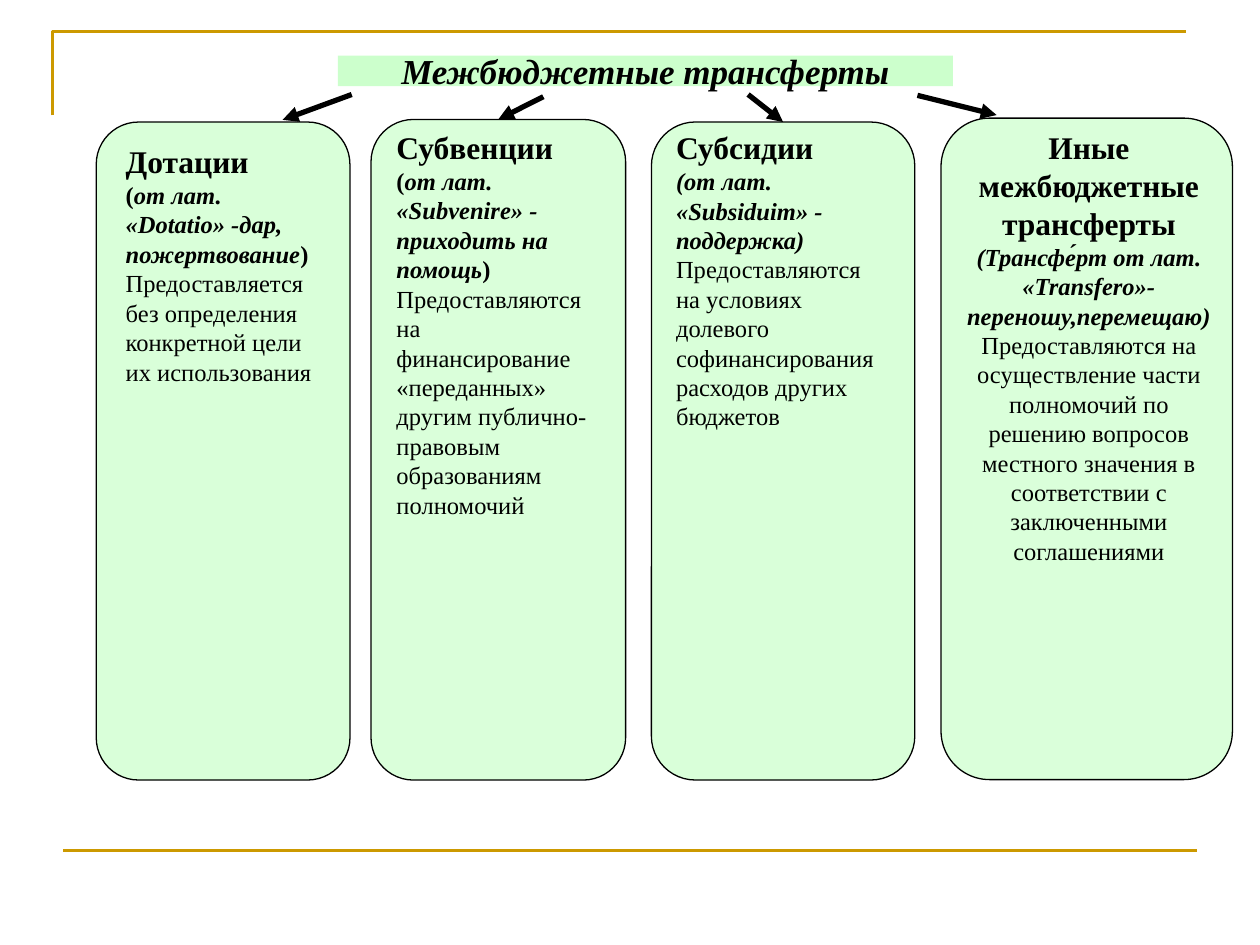
from lxml import etree
from pptx import Presentation
from pptx.dml.color import RGBColor
from pptx.enum import shapes, text
from pptx.oxml import ns
from pptx.util import Pt

COLORS = {"mint": "CCFFCC", "gold": "CC9900", "black": "000000"}
SERIF = "Times New Roman"
HEAD = dict(size=18, bold=True)
LATIN = dict(size=14, bold=True, italic=True)
PAREN = dict(size=14, bold=True)
BODY = dict(size=14)


def add_span(para, words, size, bold=False, italic=False, font=SERIF):
    span = para.add_run()
    span.text = words
    span.font.name = font
    span.font.size = Pt(size)
    span.font.bold = bold
    span.font.italic = italic
    span.font.color.rgb = RGBColor.from_string(COLORS["black"])


def add_line(start, end, color, width):
    line = page.shapes.add_connector(
        shapes.MSO_CONNECTOR.STRAIGHT, *map(Pt, start + end))
    line.line.color.rgb = RGBColor.from_string(COLORS[color])
    line.line.width = Pt(width)
    etree.SubElement(line._element.spPr, ns.qn("a:effectLst"))
    return line


deck = Presentation()
deck.slide_width, deck.slide_height = Pt(720), Pt(540)
page = deck.slides.add_slide(deck.slide_layouts[5])

# Gold frame lines
builder = page.shapes.build_freeform(Pt(30), Pt(66))
builder.add_line_segments([(Pt(30), Pt(18)), (Pt(678), Pt(18))], close=False)
corner = builder.convert_to_shape()
corner.fill.background()
corner.line.color.rgb = RGBColor.from_string(COLORS["gold"])
corner.line.width = Pt(1.5)
corner.shadow.inherit = False
add_line((36, 486), (684, 486), "gold", 1.5)

# Title band
title = page.shapes.title
title.left, title.top, title.width, title.height = map(Pt, (193, 31.75, 351.5, 17.5))
title.fill.solid()
title.fill.fore_color.rgb = RGBColor.from_string(COLORS["mint"])
frame = title.text_frame
frame.auto_size = text.MSO_AUTO_SIZE.NONE
frame.word_wrap = False
frame.vertical_anchor = text.MSO_ANCHOR.MIDDLE
frame.paragraphs[0].alignment = text.PP_ALIGN.CENTER
add_span(frame.paragraphs[0], "Межбюджетные трансферты", 20, bold=True, italic=True)

# Rounded panels: left, top, width, height, opacity in percent
panels = []
for *place, opacity in [
    (55, 69.75, 145, 376, 74),
    (212, 68.25, 145.5, 377.5, 72),
    (372.25, 69.75, 150.5, 376, 74),
    (537.75, 67.5, 166.5, 378, 72),
]:
    panel = page.shapes.add_shape(
        shapes.MSO_SHAPE.FLOWCHART_ALTERNATE_PROCESS, *map(Pt, place))
    panel.shadow.inherit = False
    panel.fill.solid()
    panel.fill.fore_color.rgb = RGBColor.from_string(COLORS["mint"])
    tint = panel._element.spPr.find(".//" + ns.qn("a:srgbClr"))
    etree.SubElement(tint, ns.qn("a:alpha"), val=str(opacity * 1000))
    panel.line.color.rgb = RGBColor.from_string(COLORS["black"])
    panel.line.width = Pt(0.75)
    panels.append(panel)

# Arrows from the title to the panels; the middle two join panel tops
for start, end, target in [
    ((201, 54), (161.5, 68.5), None),
    ((310.5, 55.25), (284.75, 68.25), panels[1]),
    ((427.5, 54), (447.5, 69.75), panels[2]),
    ((524.25, 54.5), (569.5, 65.75), None),
]:
    arrow = add_line(start, end, "black", 3)
    etree.SubElement(arrow.line._get_or_add_ln(), ns.qn("a:tailEnd"), type="triangle")
    if target is not None:
        arrow.end_connect(target, 0)

# Panel texts: place, alignment, paragraphs made of (words, style)
left, center = text.PP_ALIGN.LEFT, text.PP_ALIGN.CENTER
for place, alignment, paragraphs in [
    ((64.75, 77.75, 125, 147.5), left, [
        [("Дотации", HEAD)],
        [("(", PAREN), ("от лат. «Dotatio» -дар, пожертвование", LATIN), (")", PAREN)],
        [("Предоставляется без определения конкретной цели их использования", BODY)],
    ]),
    ((219.5, 69.75, 130.5, 232.5), left, [
        [("Субвенции", HEAD)],
        [("(", PAREN), ("от лат. «Subvenire» - приходить на помощь", LATIN), (")", PAREN)],
        [("Предоставляются на финансирование «переданных» другим "
          "публично-правовым образованиям полномочий", BODY)],
    ]),
    ((379.25, 69.75, 136, 181.5), left, [
        [("Субсидии", HEAD)],
        [("(от лат. «Subsiduim» - поддержка)", LATIN)],
        [("Предоставляются на условиях долевого софинансирования "
          "расходов других бюджетов", BODY)],
    ]),
    ((544.5, 69.75, 155.5, 259), center, [
        [("Иные межбюджетные трансферты", HEAD),
         (" ", dict(size=9, font="Arial")),
         ("(Трансфе́рт от лат. «Transfero»-переношу,перемещаю) ", LATIN),
         ("Предоставляются на осуществление части полномочий по решению "
          "вопросов местного значения в соответствии с заключенными "
          "соглашениями", BODY)],
    ]),
]:
    box = page.shapes.add_textbox(*map(Pt, place))
    frame = box.text_frame
    frame.word_wrap = True
    frame.auto_size = text.MSO_AUTO_SIZE.SHAPE_TO_FIT_TEXT
    for index, spans in enumerate(paragraphs):
        para = frame.add_paragraph() if index else frame.paragraphs[0]
        para.alignment = alignment
        for words, style in spans:
            add_span(para, words, **style)

deck.save("out.pptx")
